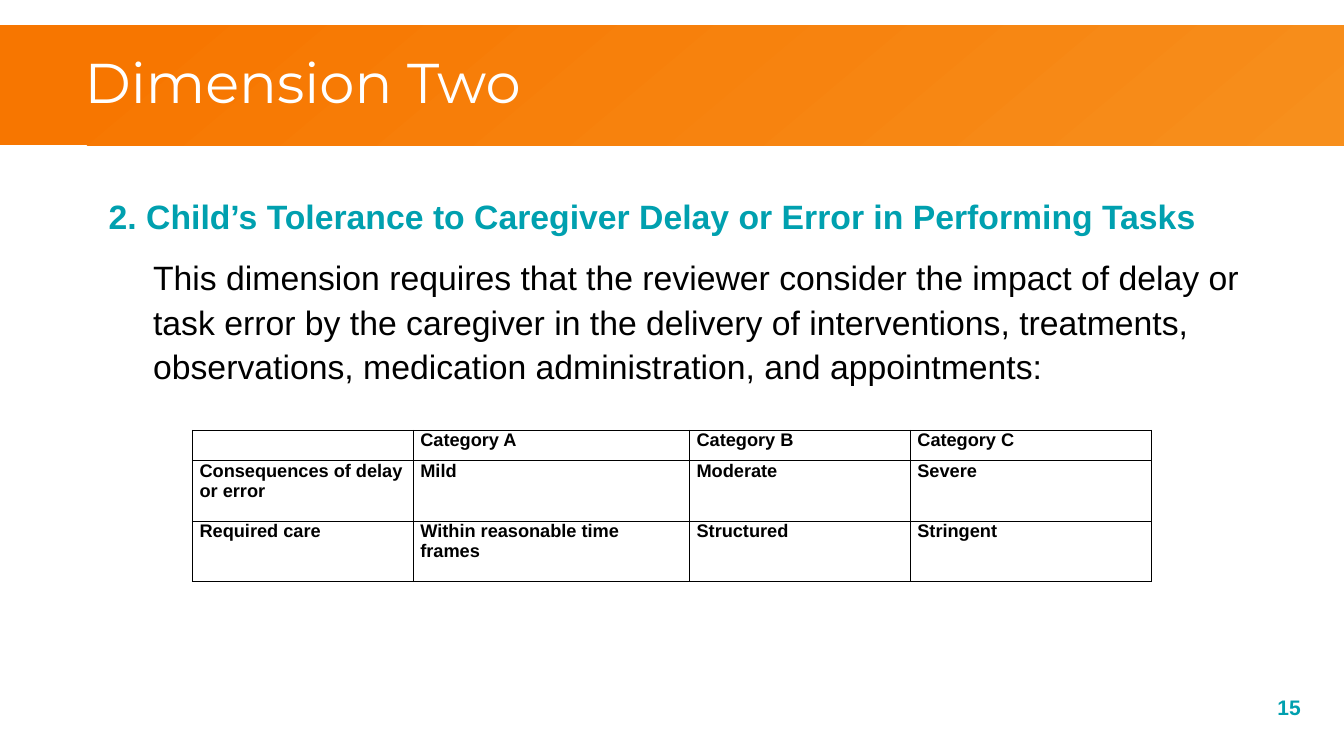
from lxml import etree
from pptx import Presentation
from pptx.dml.color import RGBColor
from pptx.enum.shapes import MSO_SHAPE
from pptx.enum.text import MSO_ANCHOR, PP_ALIGN
from pptx.oxml.ns import qn
from pptx.util import Inches, Pt

WHITE = RGBColor(0xFF, 0xFF, 0xFF)
BLACK = RGBColor(0x00, 0x00, 0x00)
TEAL = RGBColor(0x00, 0xA0, 0xAF)
ORANGE = RGBColor(0xF7, 0x76, 0x00)
LIGHT_ORANGE = RGBColor(0xF7, 0x8F, 0x1C)

COLUMNS = [2.19, 2.74, 2.19, 2.39]
ROWS = [0.3, 0.6, 0.6]
CATEGORIES = [
    ["", "Category A", "Category B", "Category C"],
    ["Consequences of delay or error", "Mild", "Moderate", "Severe"],
    ["Required care", "Within reasonable time frames", "Structured", "Stringent"],
]


def write(p, text, size, color, font="Arial", bold=False,
          align=PP_ALIGN.LEFT, spacing=1.0, before=0, after=0):
    p.alignment = align
    p.line_spacing = spacing
    p.space_before, p.space_after = Pt(before), Pt(after)
    r = p.add_run()
    r.text = text
    r.font.name, r.font.size, r.font.bold = font, Pt(size), bold
    r.font.color.rgb = color


def add_text_frame(s, x, y, w, h, anchor=MSO_ANCHOR.TOP):
    tf = s.shapes.add_textbox(Inches(x), Inches(y), Inches(w), Inches(h)).text_frame
    tf.word_wrap = True
    tf.vertical_anchor = anchor
    return tf


def add_header(s, x, y, w, h):
    # Gradient band
    band = s.shapes.add_shape(MSO_SHAPE.RECTANGLE, Inches(x), Inches(y), Inches(w), Inches(h))
    band.shadow.inherit = False
    band.line.fill.background()
    band.fill.gradient()
    band.fill.gradient_angle = 310
    for stop, color, position in zip(band.fill.gradient_stops,
                                     (ORANGE, LIGHT_ORANGE), (0.09, 1)):
        stop.color.rgb, stop.position = color, position

    # Title, brought in front of the band
    title = s.shapes.title
    title.left, title.top = Inches(x + 0.74), Inches(y + 0.01)
    title.width, title.height = Inches(w - 0.88), Inches(h - 0.01)
    title.text_frame.vertical_anchor = MSO_ANCHOR.MIDDLE
    write(title.text_frame.paragraphs[0], "Dimension Two", 40, WHITE,
          font="Montserrat", spacing=0.9)
    band.element.addnext(title.element)


def add_body(s, x, y, w, h):
    tf = add_text_frame(s, x, y, w, h)
    write(tf.paragraphs[0],
          "2. Child’s Tolerance to Caregiver Delay or Error in Performing Tasks",
          24.1, TEAL, bold=True, spacing=1.1, after=6)
    p = tf.add_paragraph()
    p_pr = p._p.get_or_add_pPr()
    p_pr.set("marL", str(Inches(0.44)))
    p_pr.set("indent", "0")
    write(p, "This dimension requires that the reviewer consider the impact of delay or "
          "task error by the caregiver in the delivery of interventions, treatments, "
          "observations, medication administration, and appointments:",
          24.1, BLACK, spacing=1.1, before=6, after=6)


def add_borders(cell):
    tc_pr = cell._tc.get_or_add_tcPr()
    for i, side in enumerate(("lnL", "lnR", "lnT", "lnB")):
        ln = etree.Element(qn(f"a:{side}"), w=str(Pt(1)))
        fill = etree.SubElement(ln, qn("a:solidFill"))
        etree.SubElement(fill, qn("a:srgbClr"), val=str(BLACK))
        tc_pr.insert(i, ln)


def add_category_table(s, x, y):
    table = s.shapes.add_table(len(ROWS), len(COLUMNS), Inches(x), Inches(y),
                               Inches(sum(COLUMNS)), Inches(sum(ROWS))).table
    table.first_row = table.horz_banding = False
    for column, width in zip(table.columns, COLUMNS):
        column.width = Inches(width)
    for row, height, texts in zip(table.rows, ROWS, CATEGORIES):
        row.height = Inches(height)
        for cell, text in zip(row.cells, texts):
            cell.margin_left = cell.margin_right = Inches(0.07)
            cell.margin_top = cell.margin_bottom = 0
            cell.fill.background()
            add_borders(cell)
            if text:
                write(cell.text_frame.paragraphs[0], text, 13, BLACK, bold=True)


def add_page_number(s, x, y, w, h):
    tf = add_text_frame(s, x, y, w, h, MSO_ANCHOR.MIDDLE)
    write(tf.paragraphs[0], "15", 15, TEAL, bold=True, align=PP_ALIGN.RIGHT)


def main():
    prs = Presentation()
    prs.slide_width, prs.slide_height = Inches(13.33), Inches(7.5)
    s = prs.slides.add_slide(prs.slide_layouts[5])
    add_header(s, 0, 0.25, 13.33, 1.19)
    add_body(s, 0.98, 1.85, 11.98, 2.02)
    add_category_table(s, 1.91, 4.27)
    add_page_number(s, 12.15, 6.77, 0.85, 0.48)
    prs.save("out.pptx")


if __name__ == "__main__":
    main()
